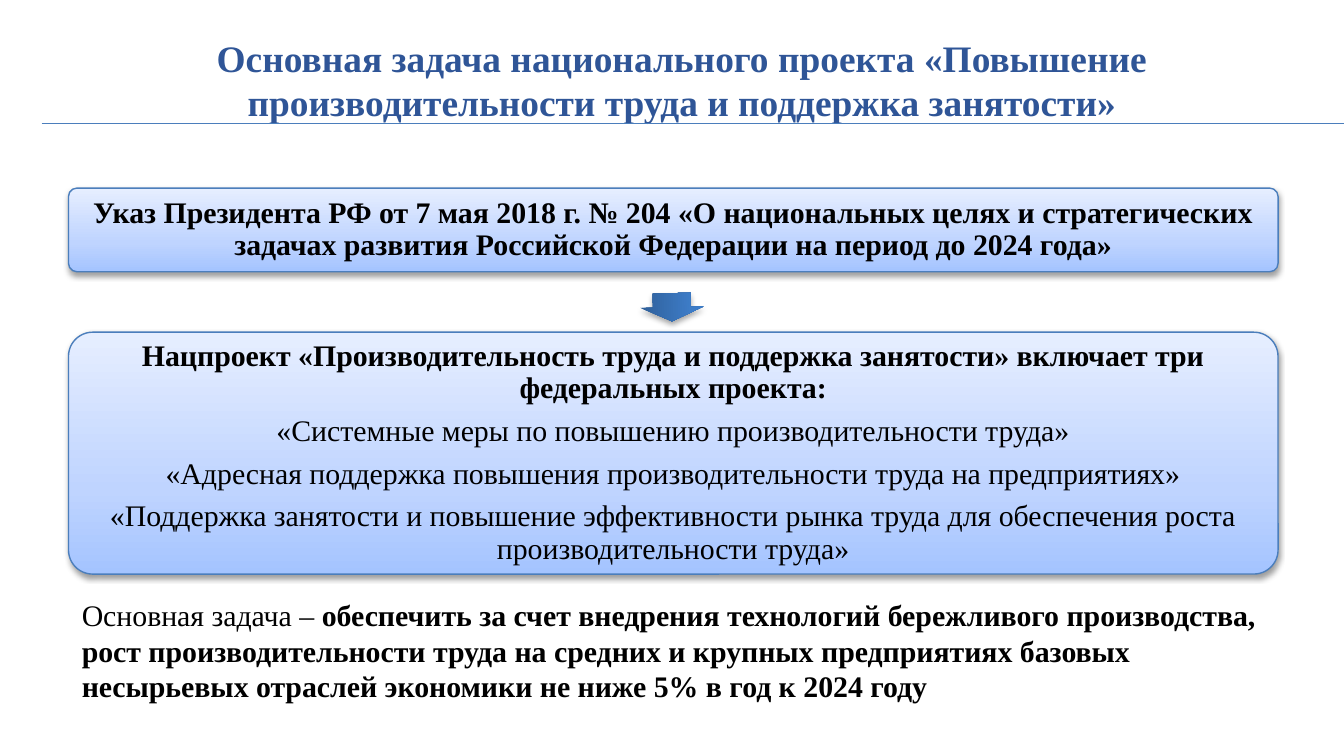
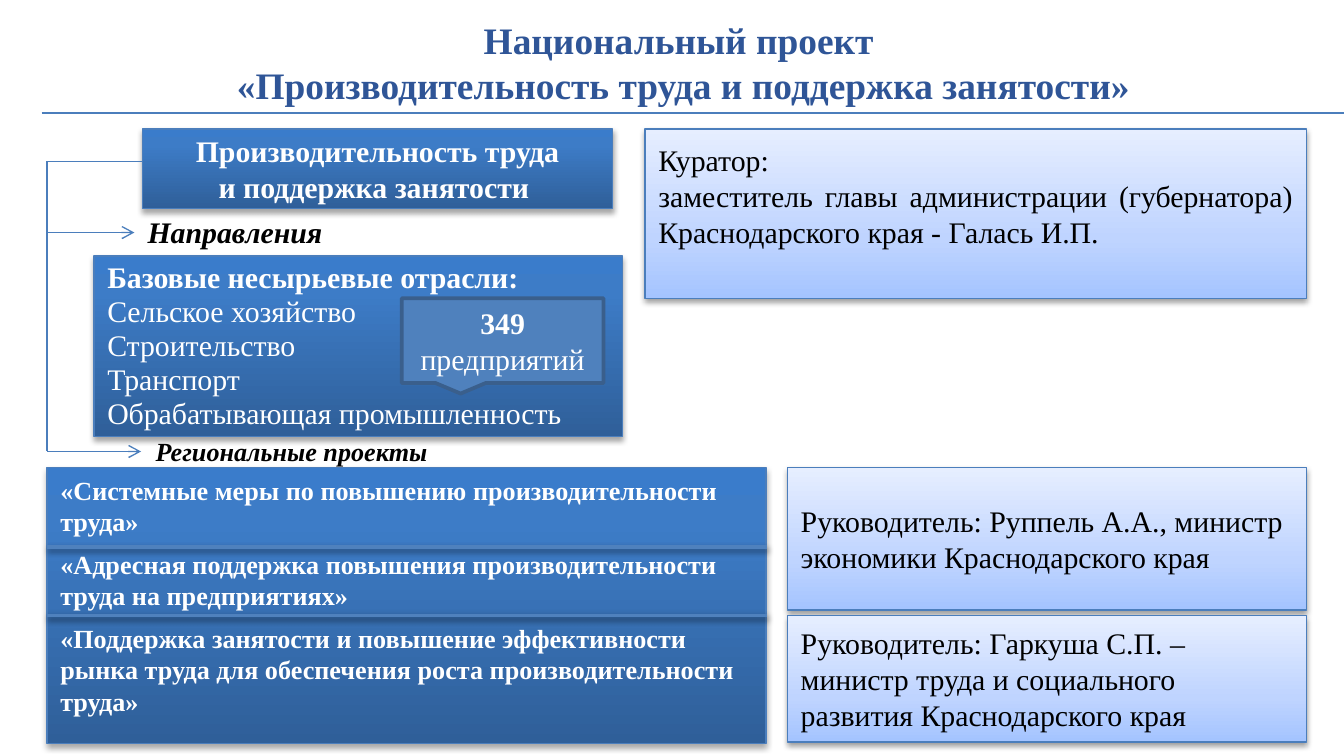
"""Builds two slides about the national labour productivity project."""
from lxml.etree import SubElement
from pptx import Presentation
from pptx.dml.color import RGBColor
from pptx.enum.shapes import MSO_CONNECTOR, MSO_SHAPE as SHAPE
from pptx.enum.text import MSO_ANCHOR as ANCHOR, PP_ALIGN as ALIGN
from pptx.oxml.ns import qn
from pptx.util import Pt

C = {
    "title": "2F5597", "black": "000000", "white": "FFFFFF",
    "edge": "4B7EBC", "accent": "4F81BD", "accent_edge": "3A5F8C",
}
GRADIENTS = {
    "light": [(0, "A4C4FF"), (35, "BFD4FF"), (100, "E6EEFF")],
    "dark": [(0, "2F5F99"), (80, "3D7CC7"), (100, "3A7CCB")],
}
SHADOWS = {"light": (38, 1.6), "dark": (35, 1.8)}
FONT = "Times New Roman"
SYSTEM = "«Системные меры по повышению производительности труда»"
TARGETED = "«Адресная поддержка повышения производительности труда на предприятиях»"
EMPLOYMENT = ("«Поддержка занятости и повышение эффективности рынка труда "
              "для обеспечения роста производительности труда»")


def rgb(name):
    """Return the colour of a palette entry."""
    return RGBColor.from_string(C[name])


class Deck:
    """Holds the presentation, its style and the current slide."""

    def __init__(self):
        """Open a 16:9 presentation."""
        self.prs = Presentation()
        self.prs.slide_width, self.prs.slide_height = Pt(720), Pt(405)
        self.s = None

    def slide(self):
        """Start a blank slide."""
        self.s = self.prs.slides.add_slide(self.prs.slide_layouts[6])

    def shadow(self, effects, kind):
        """Add a soft shadow below to an effect list."""
        alpha, dist = SHADOWS[kind]
        outer = SubElement(effects, qn("a:outerShdw"), blurRad=str(Pt(3.1)),
                           dist=str(Pt(dist)), dir="5400000", rotWithShape="0")
        clr = SubElement(outer, qn("a:srgbClr"), val=C["black"])
        SubElement(clr, qn("a:alpha"), val=str(alpha * 1000))

    def put_text(self, sp, paras, size=16, color="black", align=ALIGN.LEFT,
                 anchor=ANCHOR.MIDDLE, spacing=None, after=None, inset=None):
        """Fill a shape with paragraphs, each a list of (text, style) runs."""
        tf = sp.text_frame
        tf.word_wrap = True
        tf.vertical_anchor = anchor
        if inset:
            tf.margin_left = tf.margin_right = Pt(inset)
            tf.margin_top = tf.margin_bottom = Pt(inset)
        for i, runs in enumerate(paras):
            p = tf.add_paragraph() if i else tf.paragraphs[0]
            p.alignment = align
            if spacing:
                p.line_spacing = spacing
            if after:
                p.space_after = Pt(after)
            for text, style in runs:
                if text == "\n":
                    p.add_line_break()
                    continue
                r = p.add_run()
                r.text = text
                r.font.name, r.font.size = FONT, Pt(size)
                r.font.bold, r.font.italic = "b" in style, "i" in style
                r.font.color.rgb = rgb(color)

    def text(self, x, y, w, h, paras, anchor=ANCHOR.TOP, **style):
        """Add a text box."""
        sp = self.s.shapes.add_textbox(Pt(x), Pt(y), Pt(w), Pt(h))
        self.put_text(sp, paras, anchor=anchor, **style)

    def shape(self, kind, x, y, w, h, edge="edge", width=0.75):
        """Add a preset shape with an outline and no shadow."""
        sp = self.s.shapes.add_shape(kind, Pt(x), Pt(y), Pt(w), Pt(h))
        sp.shadow.inherit = False
        if edge:
            sp.line.color.rgb = rgb(edge)
            sp.line.width = Pt(width)
        else:
            sp.line.fill.background()
        return sp

    def panel(self, x, y, w, h, look, paras=(), kind=SHAPE.RECTANGLE, edge="edge", **style):
        """Add a gradient shape with a shadow and text."""
        sp = self.shape(kind, x, y, w, h, edge)
        sp.fill.gradient()
        sp.fill.gradient_angle = 90
        spPr = sp.element.spPr
        stops = spPr.find(qn("a:gradFill")).find(qn("a:gsLst"))
        stops.clear()
        for pos, color in GRADIENTS[look]:
            gs = SubElement(stops, qn("a:gs"), pos=str(pos * 1000))
            SubElement(gs, qn("a:srgbClr"), val=color)
        self.shadow(spPr.find(qn("a:effectLst")), look)
        color = "white" if look == "dark" else "black"
        self.put_text(sp, paras, color=color, **style)
        return sp

    def line(self, x1, y1, x2, y2, color="edge", width=0.75, arrow=False, shadow=False):
        """Add a straight line, with an arrowhead or a shadow if asked."""
        c = self.s.shapes.add_connector(MSO_CONNECTOR.STRAIGHT, Pt(x1), Pt(y1), Pt(x2), Pt(y2))
        c.line.color.rgb = rgb(color)
        c.line.width = Pt(width)
        spPr = c.element.spPr
        if arrow:
            SubElement(spPr.find(qn("a:ln")), qn("a:tailEnd"), type="arrow")
        effects = SubElement(spPr, qn("a:effectLst"))
        if shadow:
            self.shadow(effects, "light")

    def title(self, x, y, w, h, runs, rule_y, anchor=ANCHOR.TOP):
        """Add a slide title and the rule below it."""
        self.text(x, y, w, h, [runs], anchor, size=20, color="title", align=ALIGN.CENTER)
        self.line(22.3, rule_y, 720, rule_y)


def task_slide(d):
    """Build the slide with the main task."""
    d.slide()
    boxes = [
        (100.8, 44.8, [[("Указ Президента РФ от 7 мая 2018 г. № 204 «О национальных целях "
                         "и стратегических задачах развития Российской Федерации "
                         "на период до 2024 года»", "b")]]),
        (178, 129.6, [[("Нацпроект «Производительность труда и поддержка занятости» "
                        "включает три федеральных проекта:", "b")],
                      [(SYSTEM, "")], [(TARGETED, "")], [(EMPLOYMENT, "")]]),
    ]
    for y, h, paras in boxes:
        sp = d.panel(36.7, y, 648, h, "light", paras, SHAPE.ROUNDED_RECTANGLE,
                     align=ALIGN.CENTER, spacing=0.9, after=5.6, inset=5)
        sp.adjustments[0] = 0.1
    arrow = d.panel(352.3, 147.7, 15.1, 33.8, "dark", kind=SHAPE.RIGHT_ARROW, edge=None)
    arrow.adjustments[0], arrow.adjustments[1] = 0.6, 0.5
    arrow.rotation = 88.8
    d.text(36.7, 316, 646.6, 65.5, [[
        ("Основная задача – ", ""),
        ("обеспечить за счет внедрения технологий бережливого производства, рост "
         "производительности труда на средних и крупных предприятиях базовых несырьевых "
         "отраслей экономики не ниже 5% в год к 2024 году", "b")]])
    d.title(25.2, 15.1, 680.4, 55.4,
            [("Основная задача национального проекта «Повышение производительности труда "
              "и поддержка занятости»", "b")], 66.3)


def project_slide(d):
    """Build the slide with the project structure."""
    d.slide()
    d.title(31, 15.1, 670.3, 36,
            [("Национальный проект ", "b"), ("\n", ""),
             ("«Производительность труда и поддержка занятости»", "b")], 60.5, ANCHOR.MIDDLE)
    d.panel(76.3, 69.1, 252, 42.5, "dark",
            [[("Производительность труда", "b")], [("и поддержка занятости ", "b")]],
            align=ALIGN.CENTER)

    left, top, bottom = 25.2, 86.4, 241.9
    d.line(76.3, top, left, top)
    d.line(left, top, left, bottom)
    for y, x in ((124.6, 72), (bottom, 75.6)):
        d.line(left, y, x, y, arrow=True)
    d.text(72, 110.9, 116.6, 26.6, [[("Направления", "bi")]])
    d.text(76.3, 229.7, 226.8, 24.5, [[("Региональные проекты", "bi")]], size=14)

    d.panel(left, 250.6, 385.2, 147.6, "dark",
            [[(name, "b")] for name in (SYSTEM, TARGETED, EMPLOYMENT)],
            size=14, anchor=ANCHOR.TOP, after=6)
    heads = [
        (250.6, 76.3, "Руководитель: Руппель А.А., министр экономики Краснодарского края"),
        (329.8, 67.7, "Руководитель: Гаркуша С.П. – министр труда и социального "
                      "развития Краснодарского края"),
    ]
    for y, h, head in heads:
        d.panel(421.9, y, 277.9, h, "light", [[(head, "")]])
    for y in (293, 329.8):
        d.line(left, y, 411.1, y, "accent", 2, shadow=True)

    curator = d.panel(345.6, 69.1, 354.2, 90.7, "light", [
        [("Куратор:", "")],
        [("заместитель главы администрации (губернатора) Краснодарского края - Галась И.П.", "")],
    ], align=ALIGN.JUSTIFY)
    curator.text_frame.margin_bottom = Pt(22.8)

    sectors = ("Сельское хозяйство", "Строительство", "Транспорт", "Обрабатывающая промышленность")
    d.panel(50.4, 137.2, 283, 96.8, "dark",
            [[("Базовые несырьевые отрасли:", "b")]] + [[(name, "")] for name in sectors],
            spacing=0.95)
    callout = d.shape(SHAPE.RECTANGULAR_CALLOUT, 215.3, 159.8, 108, 45.4, "accent_edge", 2)
    callout.fill.solid()
    callout.fill.fore_color.rgb = rgb("accent")
    d.put_text(callout, [[("349", "b")], [("предприятий", "")]], color="white", align=ALIGN.CENTER)


def main():
    """Build and save the deck."""
    d = Deck()
    task_slide(d)
    project_slide(d)
    d.prs.save("out.pptx")


if __name__ == "__main__":
    main()
